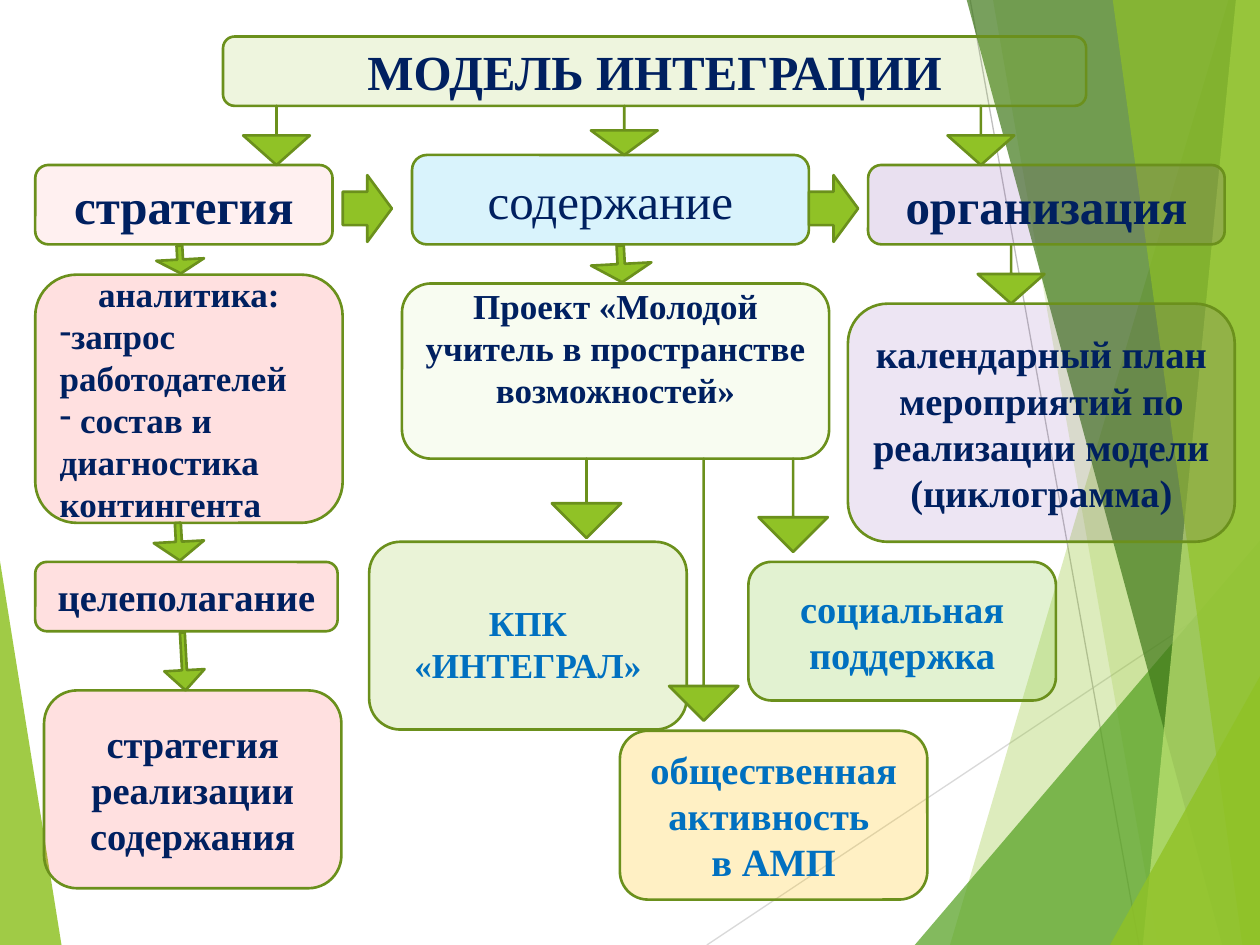
"""Slide with the integration model: three branches, their steps and linking arrows."""
import dataclasses

import lxml.etree
import pptx
import pptx.dml.color
import pptx.enum.shapes
import pptx.enum.text
import pptx.oxml.ns
import pptx.util

Inches = pptx.util.Inches
Shape = pptx.enum.shapes.MSO_SHAPE
Align = pptx.enum.text.PP_ALIGN


@dataclasses.dataclass(frozen=True)
class Theme:
    """Colours, fonts and type sizes of the slide."""

    font: str = "Times New Roman"
    green: str = "90C226"
    outline: str = "6B901C"
    navy: str = "002060"
    blue: str = "0070C0"
    red: str = "FF0000"
    purple: str = "7030A0"
    heading: int = 28
    body: int = 22
    small: int = 20
    line_width: float = 1.5
    hairline: float = 0.75


THEME = Theme()


class Painter:
    """Holds the theme and the current slide and draws each kind of element."""

    def __init__(self, theme, page):
        """Keep the theme and the slide."""
        self.theme = theme
        self.page = page

    def color(self, value):
        """Turn a hex string into a colour."""
        return pptx.dml.color.RGBColor.from_string(value)

    def element(self, parent, tag, **values):
        """Append a drawing element to its parent."""
        return lxml.etree.SubElement(parent, pptx.oxml.ns.qn(tag), **values)

    def fill(self, shape, color, opacity=100):
        """Fill a shape, with opacity in percent."""
        shape.shadow.inherit = False
        shape.fill.solid()
        shape.fill.fore_color.rgb = self.color(color)
        if opacity < 100:
            tint = shape.fill._xPr.find(".//" + pptx.oxml.ns.qn("a:srgbClr"))
            self.element(tint, "a:alpha", val=str(opacity * 1000))

    def outline(self, shape):
        """Give a shape the common outline."""
        shape.line.color.rgb = self.color(self.theme.outline)
        shape.line.width = pptx.util.Pt(self.theme.line_width)

    def facet(self, points, color, opacity):
        """Draw a translucent background polygon."""
        corners = [(Inches(x), Inches(y)) for x, y in points]
        builder = self.page.shapes.build_freeform(*corners[0])
        builder.add_line_segments(corners[1:], close=True)
        shape = builder.convert_to_shape()
        self.fill(shape, color, opacity)
        shape.line.fill.background()

    def hairline(self, start, end, color):
        """Draw a thin background line."""
        ends = [Inches(value) for value in (*start, *end)]
        line = self.page.shapes.add_connector(
            pptx.enum.shapes.MSO_CONNECTOR.STRAIGHT, *ends)
        line.line.color.rgb = self.color(color)
        line.line.width = pptx.util.Pt(self.theme.hairline)
        self.element(line._element.spPr, "a:effectLst")

    def box(self, place, color, opacity, lines, size, ink=THEME.navy,
            bold=True, bullets=False, margins=None):
        """Draw a rounded box; bullets apply after the first line."""
        box = self.page.shapes.add_shape(
            Shape.ROUNDED_RECTANGLE, *map(Inches, place))
        self.fill(box, color, opacity)
        self.outline(box)
        frame = box.text_frame
        frame.word_wrap = True
        frame.vertical_anchor = pptx.enum.text.MSO_ANCHOR.MIDDLE
        for name, value in (margins or {}).items():
            setattr(frame, name, Inches(value))
        for index, text in enumerate(lines):
            para = frame.paragraphs[0] if index == 0 else frame.add_paragraph()
            bulleted = bullets and index > 0
            para.alignment = Align.LEFT if bulleted else Align.CENTER
            if bulleted:
                self.element(para._p.get_or_add_pPr(), "a:buChar", char="-")
            span = para.add_run()
            span.text = text
            values = {"name": self.theme.font, "size": pptx.util.Pt(size), "bold": bold}
            for name, value in values.items():
                setattr(span.font, name, value)
            span.font.color.rgb = self.color(ink)

    def arrow(self, place, kind=Shape.DOWN_ARROW, stem=0.0, rotation=0):
        """Draw a block arrow with the given stem width."""
        arrow = self.page.shapes.add_shape(kind, *map(Inches, place))
        self.fill(arrow, self.theme.green)
        self.outline(arrow)
        arrow.adjustments[0] = stem
        arrow.adjustments[1] = 0.5
        arrow.rotation = rotation


def draw_background(painter):
    """Draw the faceted backdrop."""
    green = THEME.green
    painter.facet([(-0.01, 4.39), (0.49, 7.51), (-0.01, 7.5)], green, 85)
    painter.hairline((5.61, 7.5), (10.01, 4.57), "D9D9D9")
    painter.hairline((7.7, 0), (9.04, 7.5), "BFBFBF")
    facets = [
        (9.75, 7.54, 0, green, 30),
        (7.88, 9.19, -0.01, green, 20),
        (10, 7.26, 4.29, "54A021", 72),
        (7.67, 9.7, -0.01, "3F7819", 70),
        (9.81, 9.07, -0.01, "C0E474", 70),
        (8.83, 9.86, -0.01, green, 65),
        (10.01, 8.81, 5.35, green, 80),
    ]
    for upper, lower, top, color, opacity in facets:
        points = [(upper, top), (lower, 7.5), (10.01, 7.5), (10.01, top)]
        painter.facet(points, color, opacity)


def draw_boxes(painter):
    """Draw the heading, the branches and their steps."""
    green, red, purple, blue = THEME.green, THEME.red, THEME.purple, THEME.blue
    heading, body, small = THEME.heading, THEME.body, THEME.small
    box = painter.box
    box((0.28, 1.31, 2.36, 0.63), red, 6, ["стратегия"], heading)
    box((1.77, 0.29, 6.85, 0.55), green, 15, ["МОДЕЛЬ ИНТЕГРАЦИИ"], heading)
    box((6.89, 1.31, 2.83, 0.63), purple, 15, ["организация"], heading)
    box((3.27, 1.23, 3.15, 0.71), "00B0F0", 15, ["содержание"], heading, bold=False)
    box((0.28, 2.18, 2.44, 1.97), red, 12,
        ["аналитика:", "запрос работодателей", " состав и диагностика контингента"],
        small, bullets=True)
    box((0.28, 4.46, 2.4, 0.55), red, 12, ["целеполагание"], body)
    box((0.35, 5.48, 2.36, 1.57), red, 12, ["стратегия реализации содержания"], body)
    box((3.19, 2.25, 3.39, 1.39), "D5EDA2", 15,
        ["Проект «Молодой учитель в пространстве возможностей»"], small,
        margins={"margin_bottom": 0.42})
    box((2.93, 4.3, 2.52, 1.49), green, 18, ["КПК «ИНТЕГРАЛ»"], small, blue,
        margins={"margin_top": 0.17})
    box((5.94, 4.46, 2.44, 1.1), "92D050", 26, ["социальная поддержка"], body, blue)
    box((4.92, 5.8, 2.44, 1.34), "FFC000", 23,
        ["общественная активность ", "в АМП"], body, blue)
    box((6.73, 2.41, 3.07, 1.89), purple, 12,
        ["календарный план мероприятий по реализации модели (циклограмма)"], body)


def draw_arrows(painter):
    """Draw the arrows between the boxes."""
    for left, top, height in [(7.52, 0.84, 0.47), (4.69, 0.84, 0.39),
                              (1.93, 0.84, 0.47), (7.76, 1.94, 0.47)]:
        painter.arrow((left, top, 0.53, height))
    for left, height in [(6.02, 0.74), (5.31, 2.08), (4.38, 0.63)]:
        painter.arrow((left, 3.64, 0.55, height))
    for place in [(1.24, 1.95, 0.38, 0.22), (1.22, 4.15, 0.4, 0.3),
                  (1.3, 5.02, 0.32, 0.46), (4.69, 1.95, 0.48, 0.29)]:
        painter.arrow(place, stem=0.12, rotation=356.9)
    for left in (2.72, 6.42):
        painter.arrow((left, 1.39, 0.39, 0.53), Shape.RIGHT_ARROW, stem=0.5)


def main():
    """Build the deck and save it."""
    deck = pptx.Presentation()
    deck.slide_width, deck.slide_height = Inches(10), Inches(7.5)
    painter = Painter(THEME, deck.slides.add_slide(deck.slide_layouts[6]))
    draw_background(painter)
    draw_boxes(painter)
    draw_arrows(painter)
    deck.save("out.pptx")


if __name__ == "__main__":
    main()
